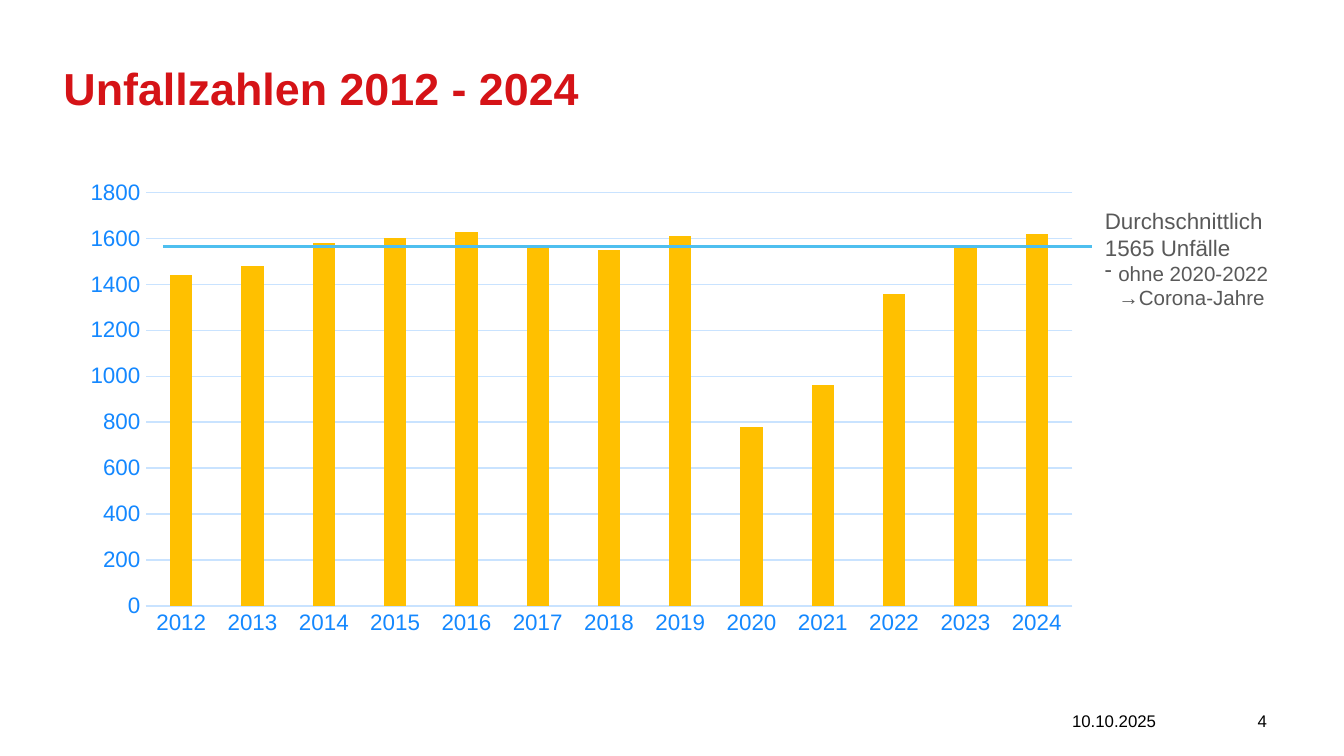
from lxml.etree import SubElement
from pptx import Presentation
from pptx.chart.data import CategoryChartData
from pptx.dml.color import RGBColor
from pptx.enum.chart import XL_CHART_TYPE as ChartType, XL_TICK_MARK as TickMark
from pptx.enum.shapes import MSO_CONNECTOR as Connector
from pptx.enum.text import MSO_ANCHOR as Anchor, PP_ALIGN as Align
from pptx.oxml import parse_xml
from pptx.oxml.ns import nsdecls, qn
from pptx.util import Pt

RED = RGBColor(0xD5, 0x13, 0x17)
BLACK = RGBColor(0, 0, 0)
GRAY = RGBColor(0x59, 0x59, 0x59)
NAVY = RGBColor(0x00, 0x49, 0x94)
BLUE = RGBColor(0x14, 0x88, 0xFF)
PALE_BLUE = RGBColor(0xC9, 0xE3, 0xFF)
SKY = RGBColor(0x4E, 0xBF, 0xEF)
AMBER = RGBColor(0xFF, 0xC0, 0x00)
FONT = "Arial"

TITLE = "Unfallzahlen 2012 - 2024"
FIRST_YEAR = 2012
ACCIDENTS = [1440, 1480, 1580, 1600, 1630, 1570, 1550, 1610, 780, 960, 1360, 1570, 1620]
# text, size, left margin, first-line indent, bullet
NOTE = [
    ("Durchschnittlich 1565 Unfälle", 12, 0, 0, None),
    ("ohne 2020-2022", 11, 7.2, -7.2, "-"),
    ("→Corona-Jahre", 11, 7.2, 0, None),
]
FOOTER = ["10.10.2025", "4"]
FOOTER_LEFT, FOOTER_STEP = 567, 59.4
# fractions of the chart frame
PLOT_LAYOUT = {"x": 0.074, "y": 0.046, "w": 0.906, "h": 0.874}


def format_text(paragraph, text, size, color, bold=False, align=Align.LEFT,
                margin=0, indent=0, bullet=None):
    properties = paragraph._p.get_or_add_pPr()
    properties.set("marL", str(Pt(margin)))
    properties.set("indent", str(Pt(indent)))
    if bullet:
        SubElement(properties, qn("a:buChar")).set("char", bullet)
    paragraph.alignment = align
    run = paragraph.add_run()
    run.text = text
    run.font.name, run.font.size = FONT, Pt(size)
    run.font.bold, run.font.color.rgb = bold, color


def text_frame(shape, anchor=Anchor.TOP):
    frame = shape.text_frame
    frame.word_wrap = True
    frame.vertical_anchor = anchor
    return frame


def style_axis(axis, line_color=None):
    axis.major_tick_mark = axis.minor_tick_mark = TickMark.NONE
    font = axis.tick_labels.font
    font.name, font.size, font.color.rgb = FONT, Pt(12), BLUE
    if line_color is None:
        axis.format.line.fill.background()
    else:
        style_line(axis.format.line, line_color, 0.75)


def style_line(line, color, width):
    line.color.rgb = color
    line.width = Pt(width)


def add_accident_chart(slide):
    data = CategoryChartData()
    data.categories = [str(FIRST_YEAR + i) for i in range(len(ACCIDENTS))]
    data.add_series("Unfälle", ACCIDENTS)
    chart = slide.shapes.add_chart(ChartType.COLUMN_CLUSTERED, Pt(37.5), Pt(91.5),
                                   Pt(548), Pt(253.5), data).chart
    chart.has_legend = chart.has_title = False
    chart.font.name, chart.font.size, chart.font.color.rgb = FONT, Pt(10), NAVY
    style_axis(chart.category_axis, PALE_BLUE)
    values = chart.value_axis
    style_axis(values)
    values.minimum_scale, values.maximum_scale, values.major_unit = 0, 1800, 200
    values.has_major_gridlines = True
    style_line(values.major_gridlines.format.line, PALE_BLUE, 0.75)

    plot = chart.plots[0]
    plot.gap_width, plot.overlap, plot.vary_by_categories = 219, -27, False
    fill = plot.series[0].format.fill
    fill.solid()
    fill.fore_color.rgb = AMBER

    plot_area = chart._chartSpace.chart.plotArea
    for old in plot_area.findall(qn("c:layout")):
        plot_area.remove(old)
    modes = '<c:xMode val="edge"/><c:yMode val="edge"/>'
    sizes = "".join(f'<c:{key} val="{value}"/>' for key, value in PLOT_LAYOUT.items())
    plot_area.insert(0, parse_xml(
        f'<c:layout {nsdecls("c")}><c:manualLayout><c:layoutTarget val="inner"/>'
        f'{modes}{sizes}</c:manualLayout></c:layout>'))


def main():
    presentation = Presentation()
    presentation.slide_width, presentation.slide_height = Pt(720), Pt(405)
    slide = presentation.slides.add_slide(presentation.slide_layouts[6])
    shapes = slide.shapes

    title = text_frame(shapes.add_textbox(Pt(34), Pt(32.4), Pt(652), Pt(29)))
    title.margin_left = title.margin_top = title.margin_bottom = 0
    format_text(title.paragraphs[0], TITLE, 24, RED, bold=True)

    add_accident_chart(slide)

    average = shapes.add_connector(Connector.STRAIGHT, Pt(87.3), Pt(131.9), Pt(585), Pt(131.9))
    style_line(average.line, SKY, 1.5)
    SubElement(average._element.spPr, qn("a:effectLst"))

    note = text_frame(shapes.add_textbox(Pt(584.8), Pt(107.3), Pt(115), Pt(63.4)))
    for i, (text, size, margin, indent, bullet) in enumerate(NOTE):
        paragraph = note.add_paragraph() if i else note.paragraphs[0]
        format_text(paragraph, text, size, GRAY, margin=margin, indent=indent, bullet=bullet)

    for i, text in enumerate(FOOTER):
        box = shapes.add_textbox(Pt(FOOTER_LEFT + i * FOOTER_STEP), Pt(375.3),
                                 Pt(FOOTER_STEP), Pt(21.6))
        format_text(text_frame(box, Anchor.MIDDLE).paragraphs[0], text, 9, BLACK,
                    align=Align.RIGHT)

    presentation.save("out.pptx")


if __name__ == "__main__":
    main()
